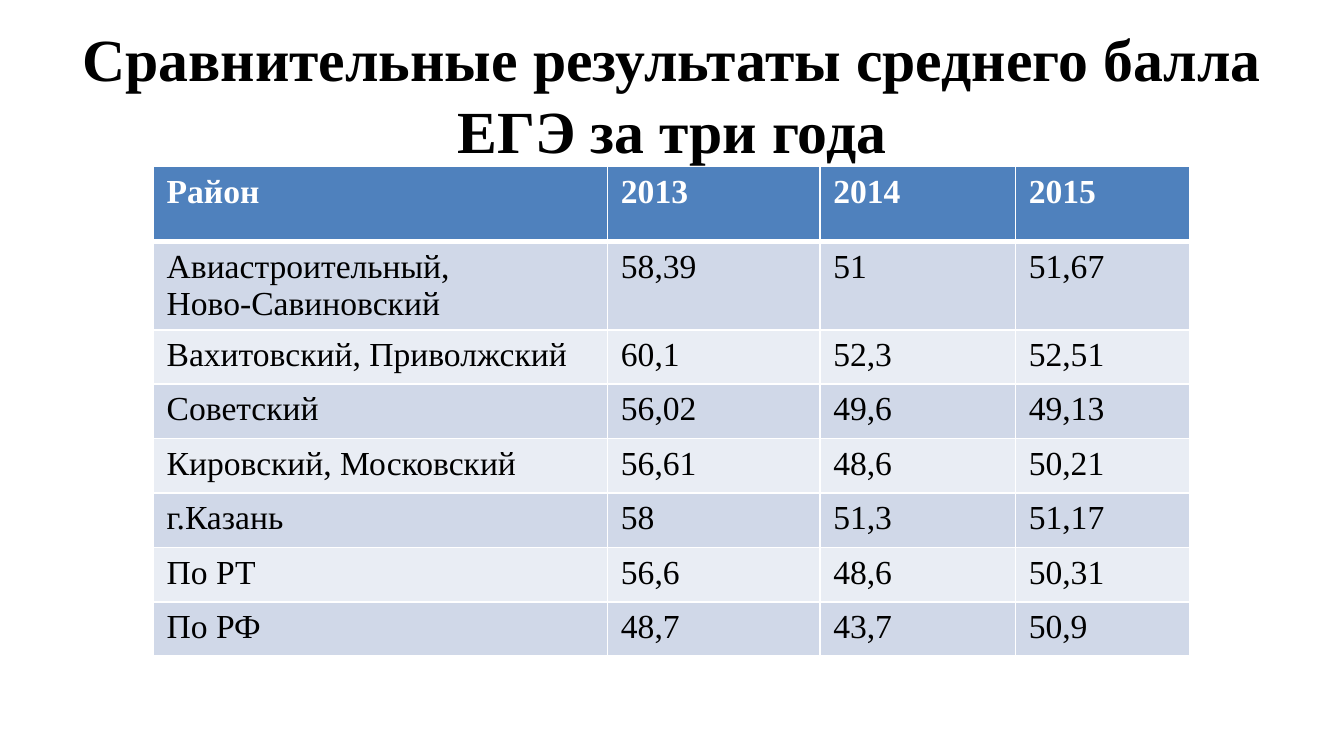
from typing import NamedTuple

from lxml.etree import SubElement
from pptx import Presentation
from pptx.dml.color import RGBColor
from pptx.enum.text import MSO_ANCHOR, MSO_AUTO_SIZE, PP_ALIGN
from pptx.oxml.ns import qn
from pptx.util import Emu, Pt

PX = 4572  # 200 px to the inch
FONT = "Times New Roman"
WHITE, BLACK, BLUE = "FFFFFF", "000000", "4F81BD"
BANDS = ("D0D8E8", "E9EDF4")
COLUMN_WIDTHS = (676, 316, 291, 260)
HEADER_HEIGHT, ROW_HEIGHT = 112, 81


class ScoreRow(NamedTuple):
    district: str
    score_2013: str
    score_2014: str
    score_2015: str


ROWS = [
    ScoreRow("Район", "2013", "2014", "2015"),
    ScoreRow("Авиастроительный,\nНово-Савиновский", "58,39", "51", "51,67"),
    ScoreRow("Вахитовский, Приволжский", "60,1", "52,3", "52,51"),
    ScoreRow("Советский", "56,02", "49,6", "49,13"),
    ScoreRow("Кировский, Московский", "56,61", "48,6", "50,21"),
    ScoreRow("г.Казань", "58", "51,3", "51,17"),
    ScoreRow("По РТ", "56,6", "48,6", "50,31"),
    ScoreRow("По РФ", "48,7", "43,7", "50,9"),
]


def px(length: int) -> Emu:
    return Emu(length * PX)


def color(value: str) -> RGBColor:
    return RGBColor.from_string(value)


def write(frame, text: str, size: int, ink: str, bold: bool) -> None:
    frame.text = text
    for para in frame.paragraphs:
        for span in para.runs:
            font_format = {"name": FONT, "size": Pt(size), "bold": bold}
            for name, value in font_format.items():
                setattr(span.font, name, value)
            span.font.color.rgb = color(ink)


def add_borders(cell, widths: dict[str, int]) -> None:
    properties = cell._tc.get_or_add_tcPr()
    for side, width in widths.items():
        line = SubElement(properties, qn(f"a:ln{side}"), w=str(Pt(width)))
        fill = SubElement(line, qn("a:solidFill"))
        SubElement(fill, qn("a:srgbClr"), val=WHITE)


def add_title(page, text: str) -> None:
    title = page.shapes.title
    place = {"left": 100, "top": 45, "width": 1800, "height": 188}
    for name, value in place.items():
        setattr(title, name, px(value))
    frame = title.text_frame
    write(frame, text, 32, BLACK, True)
    frame_format = {"word_wrap": True, "auto_size": MSO_AUTO_SIZE.NONE,
                    "vertical_anchor": MSO_ANCHOR.MIDDLE}
    for name, value in frame_format.items():
        setattr(frame, name, value)
    frame.paragraphs[0].alignment = PP_ALIGN.CENTER


def add_score_table(page, rows: list[ScoreRow]) -> None:
    heights = [HEADER_HEIGHT] + [ROW_HEIGHT] * (len(rows) - 1)
    table = page.shapes.add_table(
        len(rows), len(COLUMN_WIDTHS), px(228), px(248),
        px(sum(COLUMN_WIDTHS)), px(sum(heights))).table
    for column, width in zip(table.columns, COLUMN_WIDTHS):
        column.width = px(width)

    for row_index, (row, height) in enumerate(zip(rows, heights)):
        table.rows[row_index].height = px(height)
        header = row_index == 0
        background = BLUE if header else BANDS[(row_index - 1) % 2]
        # The header is set off by a thicker rule
        borders = {"L": 1, "R": 1, "T": 3 if row_index == 1 else 1,
                   "B": 3 if header else 1}
        for column_index, text in enumerate(row):
            cell = table.cell(row_index, column_index)
            write(cell.text_frame, text, 18, WHITE if header else BLACK, header)
            add_borders(cell, borders)
            cell.fill.solid()
            cell.fill.fore_color.rgb = color(background)


def main() -> None:
    deck = Presentation()
    deck.slide_width, deck.slide_height = px(2000), px(1125)
    page = deck.slides.add_slide(deck.slide_layouts[5])  # title only
    add_title(page, "Сравнительные результаты среднего балла ЕГЭ за три года")
    add_score_table(page, ROWS)
    deck.save("out.pptx")


if __name__ == "__main__":
    main()
